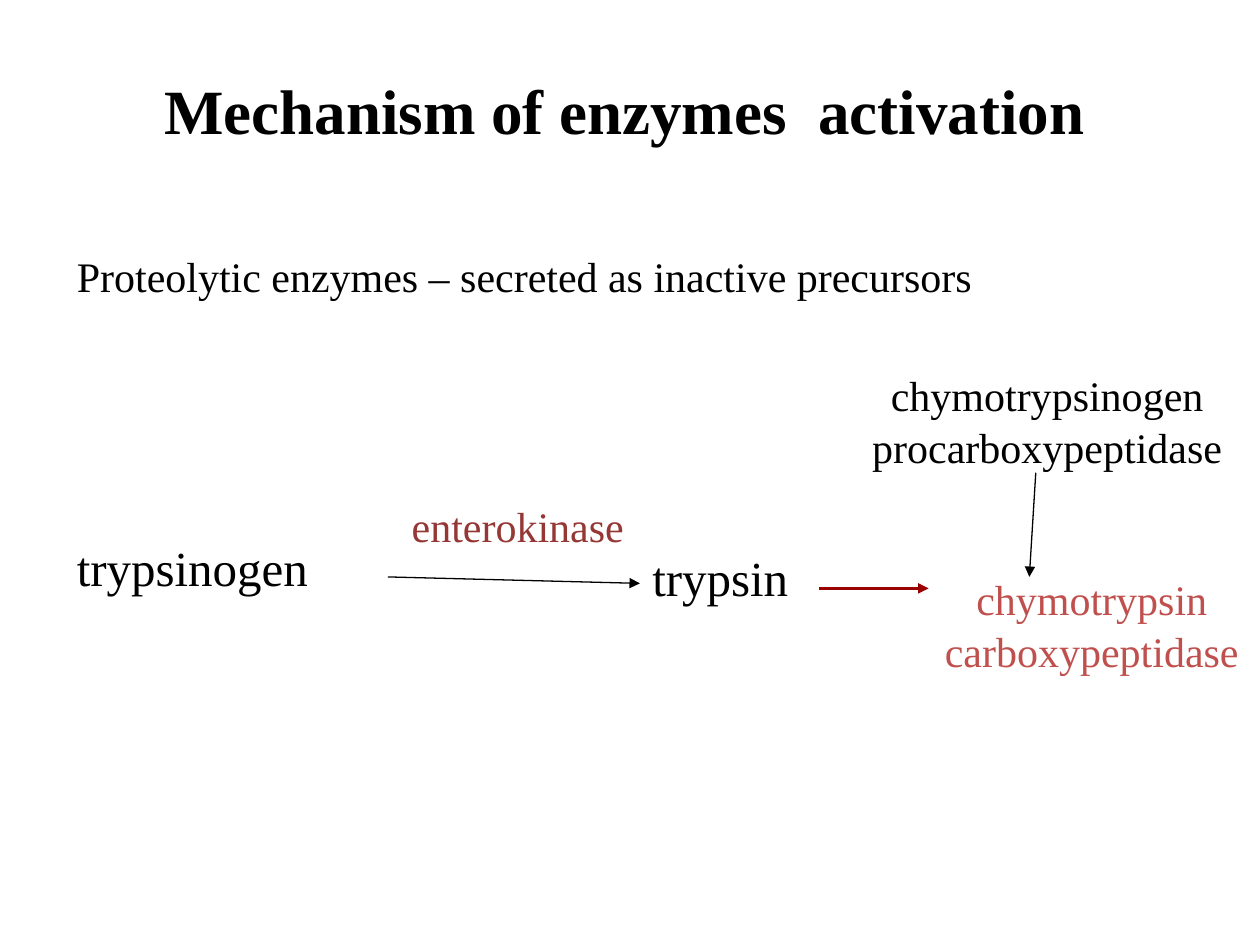
from dataclasses import dataclass

from lxml.etree import SubElement
from pptx import Presentation
from pptx.dml.color import RGBColor
from pptx.enum.shapes import MSO_CONNECTOR as Connector
from pptx.enum.text import MSO_AUTO_SIZE as AutoSize, PP_ALIGN as Align
from pptx.oxml.ns import qn
from pptx.slide import Slide
from pptx.util import Cm, Pt

FONT = "Times New Roman"
COLORS = {
    "ink": "000000",
    "activator": "953735",
    "product": "C0504D",
    "activation": "990000",
}


@dataclass
class Label:
    lines: list[str]
    left: float
    top: float
    width: float
    height: float
    size: int = 24
    color: str = "ink"
    bold: bool = False
    centered: bool = False
    wrap: bool = True


@dataclass
class Arrow:
    start: tuple[float, float]
    end: tuple[float, float]
    color: str = "ink"
    weight: float = 0.75


# Lengths in centimetres
LABELS = [
    # Heading and statement
    Label(["Mechanism of enzymes  activation"], 0.69, 1.32, 23.8, 1.78,
          size=36, bold=True, centered=True),
    Label(["Proteolytic enzymes – secreted as inactive precursors"],
          1.3, 4.93, 23.01, 1.3),
    # Trypsin activation
    Label(["trypsinogen"], 1.3, 10.72, 5.23, 1.45, size=28, wrap=False),
    Label(["trypsin"], 12.9, 10.92, 4.01, 1.45, size=28),
    Label(["enterokinase"], 8.05, 9.96, 5.08, 1.3, color="activator"),
    # Precursors and the enzymes made from them
    Label(["chymotrypsinogen", "procarboxypeptidase"], 17.3, 7.32, 7.62, 2.31,
          centered=True, wrap=False),
    Label(["chymotrypsin", "carboxypeptidase"], 18.62, 11.43, 6.78, 2.31,
          color="product", centered=True),
]

ARROWS = [
    Arrow((7.82, 11.63), (12.9, 11.76)),
    Arrow((20.88, 9.53), (20.75, 11.63)),
    Arrow((16.51, 11.86), (18.72, 11.86), color="activation", weight=2),
]


def add_label(slide: Slide, label: Label) -> None:
    box = slide.shapes.add_textbox(Cm(label.left), Cm(label.top),
                                   Cm(label.width), Cm(label.height))
    frame = box.text_frame
    frame.word_wrap = label.wrap
    frame.auto_size = AutoSize.SHAPE_TO_FIT_TEXT
    for index, line in enumerate(label.lines):
        paragraph = frame.add_paragraph() if index else frame.paragraphs[0]
        paragraph.alignment = Align.CENTER if label.centered else Align.LEFT
        if len(label.lines) > 1:
            paragraph.space_before = Pt(1)
        run = paragraph.add_run()
        run.text = line
        run.font.name = FONT
        run.font.size = Pt(label.size)
        run.font.bold = label.bold
        run.font.color.rgb = RGBColor.from_string(COLORS[label.color])


def add_arrow(slide: Slide, arrow: Arrow) -> None:
    ends = [Cm(value) for value in (*arrow.start, *arrow.end)]
    connector = slide.shapes.add_connector(Connector.STRAIGHT, *ends)
    connector.line.color.rgb = RGBColor.from_string(COLORS[arrow.color])
    connector.line.width = Pt(arrow.weight)
    # Arrowhead, and no shadow
    properties = connector.element.spPr
    SubElement(properties.find(qn("a:ln")), qn("a:tailEnd"), type="triangle")
    SubElement(properties, qn("a:effectLst"))


def main() -> None:
    deck = Presentation()
    deck.slide_width, deck.slide_height = Cm(25.4), Cm(19.05)
    slide = deck.slides.add_slide(deck.slide_layouts[6])
    for label in LABELS:
        add_label(slide, label)
    for arrow in ARROWS:
        add_arrow(slide, arrow)
    deck.save("out.pptx")


if __name__ == "__main__":
    main()
